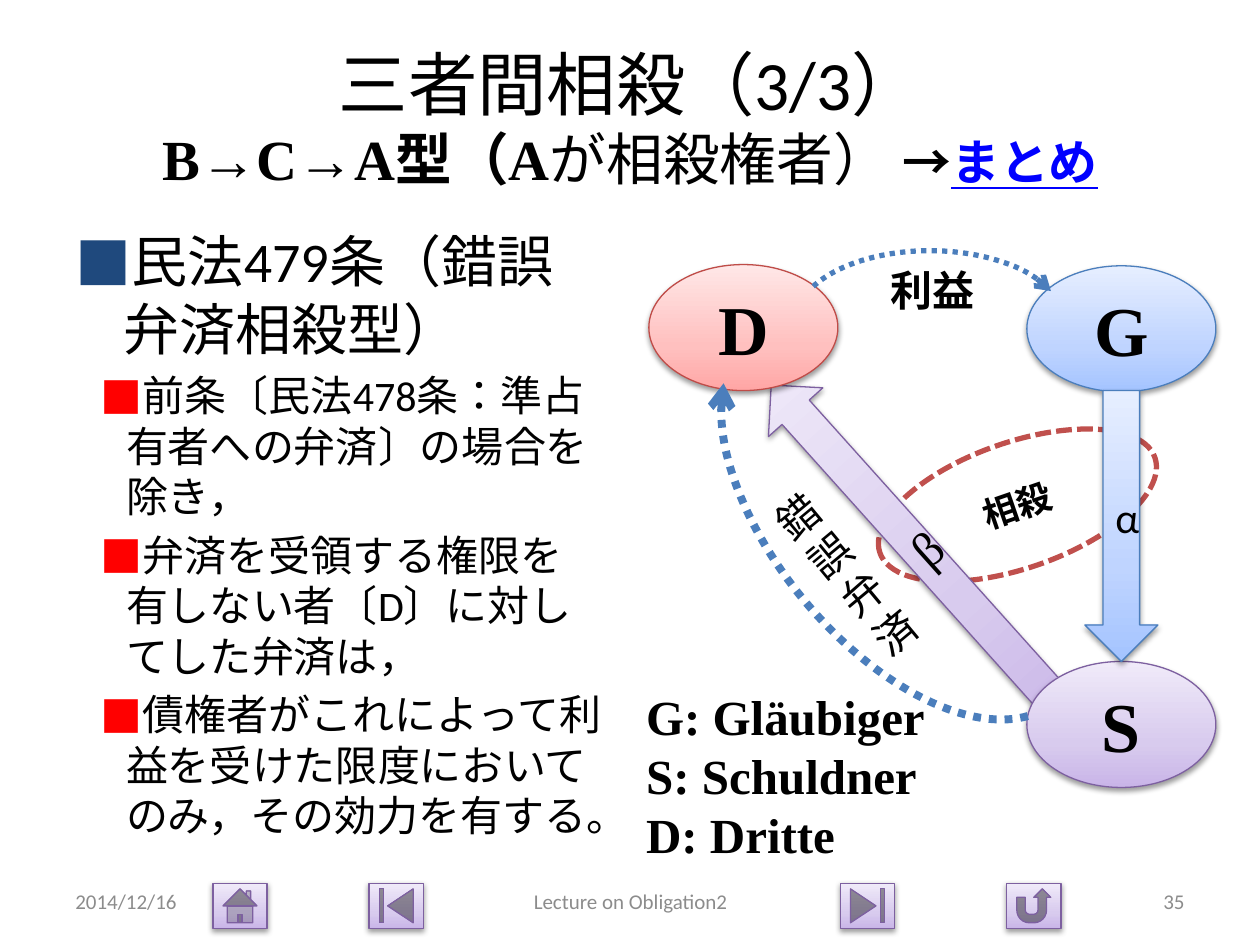
from pptx import Presentation
from pptx.dml.color import RGBColor
from pptx.enum.dml import MSO_LINE
from pptx.enum.lang import MSO_LANGUAGE_ID
from pptx.enum.shapes import MSO_SHAPE
from pptx.enum.text import MSO_ANCHOR, MSO_AUTO_SIZE, PP_ALIGN
from pptx.oxml import parse_xml
from pptx.oxml.ns import nsdecls, qn
from pptx.util import Inches, Pt

LEFT, CENTER, RIGHT = PP_ALIGN.LEFT, PP_ALIGN.CENTER, PP_ALIGN.RIGHT
MIDDLE = MSO_ANCHOR.MIDDLE
JAPANESE = MSO_LANGUAGE_ID.JAPANESE
OVAL, ARC = MSO_SHAPE.OVAL, MSO_SHAPE.ARC
DASH, DOT = MSO_LINE.SQUARE_DOT, MSO_LINE.ROUND_DOT
SANS, SERIF, CJK = "Calibri", "Times New Roman", "Noto Sans CJK JP"
COLORS = {"black": "000000", "gray": "8C8C8C", "link": "0000FF",
          "navy": "1F497D", "red": "FF0000",
          "dash": "C0504D", "dot": "4B7EBC"}
# Tone: outline, then gradient from bottom to top
TONES = {"purple": ("7D60A0", "C9B5E8", "D8CBEE", "F0EAF9"),
         "blue": ("4B7EBC", "A4C4FF", "BFD4FF", "E6EEFF"),
         "pink": ("BF4C48", "FFA6A5", "FFC0BF", "FFE7E7")}


def write(para, text, size, name=SANS, color="black", **formats):
    """Add text to a paragraph, with a line break at each newline."""
    for number, line in enumerate(text.split("\n")):
        if number:
            para.add_line_break()
        if not line:
            continue
        span = para.add_run()
        span.text = line
        values = {"size": Pt(size), "name": name, "language_id": JAPANESE, **formats}
        for key, value in values.items():
            setattr(span.font, key, value)
        span.font.color.rgb = RGBColor.from_string(COLORS[color])
        if name == CJK:
            span.font._element.find(qn("a:latin")).addnext(
                parse_xml(f'<a:ea {nsdecls("a")} typeface="{CJK}"/>'))


def add_figure(kind, place, tone=None, rotation=0):
    """Add a shape; a tone gives it a gradient, an outline and a shadow."""
    figure = page.shapes.add_shape(kind, *map(Inches, place))
    figure.rotation = rotation
    figure.shadow.inherit = False
    figure.text_frame.vertical_anchor = MIDDLE
    figure.text_frame.paragraphs[0].alignment = CENTER
    if tone is None:
        figure.fill.background()
        return figure
    outline, *stops = TONES[tone]
    figure.line.color.rgb = RGBColor.from_string(outline)
    figure.line.width = Pt(0.75)
    marks = "".join(f'<a:gs pos="{pos}"><a:srgbClr val="{stop}"/></a:gs>'
                    for pos, stop in zip((0, 35000, 100000), stops))
    properties = figure.element.spPr
    properties.find(qn("a:prstGeom")).addnext(parse_xml(
        f'<a:gradFill {nsdecls("a")} rotWithShape="1"><a:gsLst>{marks}</a:gsLst>'
        '<a:lin ang="16200000" scaled="0"/></a:gradFill>'))
    properties.find(qn("a:effectLst")).append(parse_xml(
        f'<a:outerShdw {nsdecls("a")} blurRad="40000" dist="20000" dir="5400000" '
        'rotWithShape="0"><a:srgbClr val="000000"><a:alpha val="38000"/>'
        '</a:srgbClr></a:outerShdw>'))
    return figure


deck = Presentation()
deck.slide_width, deck.slide_height = Inches(10), Inches(7.5)
page = deck.slides.add_slide(deck.slide_layouts[1])
title, body = page.placeholders
PLACES = ((title, (0.5, 0.3, 9, 1.25)), (body, (0.5, 1.75, 4.38, 4.95)))
for box, place in PLACES:
    box.left, box.top, box.width, box.height = map(Inches, place)
    box.text_frame.word_wrap = True
    box.text_frame.auto_size = MSO_AUTO_SIZE.NONE

# Title
title.text_frame.vertical_anchor = MIDDLE
para = title.text_frame.paragraphs[0]
para.alignment = CENTER
write(para, "三者間相殺（3/3）\n", 39.6)
write(para, "B→C→A型（A", 32.4, SERIF, bold=True)
write(para, "が相殺権者） ", 32.4)
write(para, "→", 27.9, SERIF, bold=True)
write(para, "まとめ", 27.9, SERIF, "link", bold=True, underline=True)

# Bulleted article
ARTICLE = (
    (0, "民法479条（錯誤弁済相殺型）"),
    (1, "前条〔民法478条：準占有者への弁済〕の場合を除き，"),
    (1, "弁済を受領する権限を有しない者〔D〕に対してした弁済は，"),
    (1, "債権者がこれによって利益を受けた限度においてのみ，その効力を有する。"),
)
BULLETS = ((32, 0.38, 0.38, "navy"), (24, 0.4, 0.2, "red"))
for number, (level, text) in enumerate(ARTICLE):
    frame = body.text_frame
    para = frame.add_paragraph() if number else frame.paragraphs[0]
    size, margin, hanging, color = BULLETS[level]
    para.level = level
    write(para, text, size)
    layout = para._p.get_or_add_pPr()
    layout.set("marL", str(Inches(margin)))
    layout.set("indent", str(-Inches(hanging)))
    for tag in (f'<a:buClr {nsdecls("a")}><a:srgbClr val="{COLORS[color]}"/></a:buClr>',
                f'<a:buFont {nsdecls("a")} typeface="{CJK}"/>',
                f'<a:buChar {nsdecls("a")} char="■"/>'):
        layout.append(parse_xml(tag))

# Navigation buttons
BUTTONS = ((MSO_SHAPE.ACTION_BUTTON_HOME, 1.69),
           (MSO_SHAPE.ACTION_BUTTON_BEGINNING, 2.93),
           (MSO_SHAPE.ACTION_BUTTON_END, 6.67),
           (MSO_SHAPE.ACTION_BUTTON_RETURN, 7.99))
for kind, left in BUTTONS:
    add_figure(kind, (left, 7.01, 0.43, 0.36), "purple")

# Footer
FOOTER = (("2014/12/16", 0.5, 2.33, LEFT),
          ("Lecture on Obligation2", 3.42, 3.17, CENTER),
          ("35", 7.17, 2.33, RIGHT))
for text, left, width, side in FOOTER:
    box = page.shapes.add_textbox(*map(Inches, (left, 6.95, width, 0.4)))
    box.text_frame.word_wrap = True
    box.text_frame.vertical_anchor = MIDDLE
    para = box.text_frame.paragraphs[0]
    para.alignment = side
    write(para, text, 12, color="gray")

# Set-off ring
ring = add_figure(OVAL, (6.92, 3.51, 2.31, 1), rotation=340.9)
ring.line.color.rgb = RGBColor.from_string(COLORS["dash"])
ring.line.width = Pt(3)
ring.line.dash_style = DASH
write(ring.text_frame.paragraphs[0], "相殺", 20, CJK, bold=True)

# Parties and their claims
PARTIES = (
    (MSO_SHAPE.UP_ARROW, (6.97, 2.62, 0.58, 3.41), "purple", 318.1, "β", 28, SERIF, False),
    (OVAL, (5.15, 2.1, 1.5, 1), "pink", 0, "D", 40, SERIF, True),
    (OVAL, (8.15, 2.11, 1.5, 1), "blue", 0, "G", 40, SERIF, True),
    (OVAL, (8.15, 5.25, 1.5, 1), "purple", 0, "S", 40, SERIF, True),
    (MSO_SHAPE.DOWN_ARROW, (8.61, 3.1, 0.58, 2.15), "blue", 0, "α", 24, SANS, False),
)
for kind, place, tone, rotation, text, size, name, bold in PARTIES:
    figure = add_figure(kind, place, tone, rotation)
    write(figure.text_frame.paragraphs[0], text, size, name, bold=bold)

# Legend
legend = page.shapes.add_textbox(*map(Inches, (5.03, 5.4, 2.73, 1.51)))
legend.text_frame.word_wrap = True
for number, text in enumerate(("G: Gläubiger", "S: Schuldner", "D: Dritte")):
    frame = legend.text_frame
    para = frame.add_paragraph() if number else frame.paragraphs[0]
    write(para, text, 28, SERIF, bold=True)

# Dotted arcs: angles in degrees, label lowered by the top margin
ARCS = (
    ((6.31, 1.99, 2.14, 1.14), 0, (197.22, 345.44), 3, "利益", True, 0.35),
    ((6.15, 2.23, 2.02, 3.78), 320.3, (97.13, 256.96), 4.5, "錯\n誤\n弁\n済", False, 0.05),
)
for place, rotation, angles, width, text, bold, margin in ARCS:
    arc = add_figure(ARC, place, rotation=rotation)
    for number, angle in enumerate(angles):
        arc.adjustments[number] = angle * 0.6
    arc.line.color.rgb = RGBColor.from_string(COLORS["dot"])
    arc.line.width = Pt(width)
    arc.line.dash_style = DOT
    arc.element.spPr.find(qn("a:ln")).append(
        parse_xml(f'<a:tailEnd {nsdecls("a")} type="arrow"/>'))
    arc.text_frame.margin_top = Inches(margin)
    write(arc.text_frame.paragraphs[0], text, 24, CJK, bold=bold)

deck.save("out.pptx")
